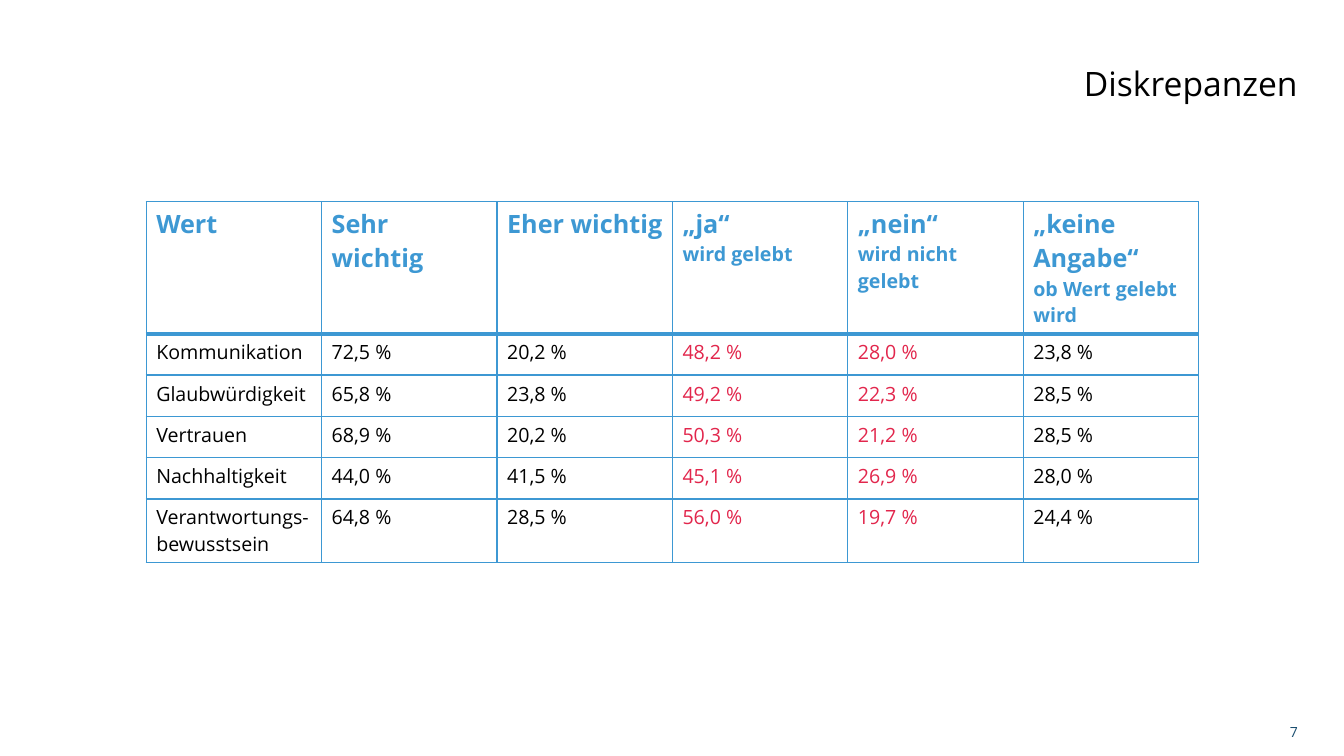
from dataclasses import dataclass

from lxml.etree import SubElement
from pptx import Presentation
from pptx.dml.color import RGBColor
from pptx.enum.text import MSO_ANCHOR, MSO_AUTO_SIZE, PP_ALIGN
from pptx.oxml import parse_xml
from pptx.oxml.ns import nsdecls, qn
from pptx.util import Inches, Pt


@dataclass(frozen=True)
class Theme:
    font: str = "Open Sans"
    ink: str = "000000"
    blue: str = "3D98D3"
    red: str = "E2264C"
    navy: str = "194D6F"
    white: str = "FFFFFF"
    title: int = 24
    head: int = 18
    body: int = 14
    small: int = 10
    thin: int = 1
    thick: int = 3


class Deck:
    """Holds the theme and the current slide and adds styled elements to it."""

    def __init__(self, theme):
        self.theme = theme
        self.file = Presentation()
        self.file.slide_width = Inches(13.33)
        self.file.slide_height = Inches(7.5)
        self.slide = self.file.slides.add_slide(self.file.slide_layouts[5])

    def style(self, run, size, color, bold=False):
        font = run.font
        font.name = self.theme.font
        font.size = Pt(size)
        font.bold = bold
        font.color.rgb = RGBColor.from_string(color)

    def line(self, shape, box, text, size, color):
        shape.left, shape.top, shape.width, shape.height = map(Inches, box)
        frame = shape.text_frame
        frame.text = text
        frame.word_wrap = True
        frame.auto_size = MSO_AUTO_SIZE.NONE
        frame.vertical_anchor = MSO_ANCHOR.MIDDLE
        para = frame.paragraphs[0]
        para.alignment = PP_ALIGN.RIGHT
        self.style(para.runs[0], size, color)

    def title(self, text, box):
        self.line(self.slide.shapes.title, box, text, self.theme.title, self.theme.ink)

    def number(self, text, box):
        shape = self.slide.shapes.add_textbox(*map(Inches, box))
        self.line(shape, box, text, self.theme.small, self.theme.navy)

    def border(self, cell, widths):
        props = cell._tc.get_or_add_tcPr()
        for spot, (side, width) in enumerate(widths.items()):
            edge = parse_xml(f'<a:ln{side} {nsdecls("a")} w="{Pt(width)}"/>')
            fill = SubElement(edge, qn("a:solidFill"))
            SubElement(fill, qn("a:srgbClr")).set("val", self.theme.blue)
            props.insert(spot, edge)

    def cell(self, cell, text, row, col):
        theme = self.theme
        cell.fill.solid()
        cell.fill.fore_color.rgb = RGBColor.from_string(theme.white)
        cell.text_frame.text = text
        runs = cell.text_frame.paragraphs[0].runs
        for index, run in enumerate(runs):
            if row == 0:
                note = index > 0 and col > 2
                self.style(run, theme.body if note else theme.head, theme.blue, True)
            else:
                self.style(run, theme.body, theme.red if col in (3, 4) else theme.ink)
        self.border(cell, {
            "L": theme.thin,
            "R": theme.thin,
            "T": theme.thick if row == 1 else theme.thin,
            "B": theme.thick if row == 0 else theme.thin,
        })

    def table(self, rows, left, top, width, height):
        box = map(Inches, (left, top, width * len(rows[0]), height * len(rows)))
        table = self.slide.shapes.add_table(len(rows), len(rows[0]), *box).table
        table.horz_banding = False
        for column in table.columns:
            column.width = Inches(width)
        for r, row in enumerate(rows):
            table.rows[r].height = Inches(height)
            for c, text in enumerate(row):
                self.cell(table.cell(r, c), text, r, c)


HEAD = ["Wert", "Sehr\vwichtig", "Eher wichtig", "„ja“ \vwird gelebt",
        "„nein“\vwird nicht gelebt", "„keine Angabe“\vob Wert gelebt wird"]
SHARES = {
    "Kommunikation": ("72,5", "20,2", "48,2", "28,0", "23,8"),
    "Glaubwürdigkeit": ("65,8", "23,8", "49,2", "22,3", "28,5"),
    "Vertrauen": ("68,9", "20,2", "50,3", "21,2", "28,5"),
    "Nachhaltigkeit": ("44,0", "41,5", "45,1", "26,9", "28,0"),
    "Verantwortungs- bewusstsein": ("64,8", "28,5", "56,0", "19,7", "24,4"),
}


def main():
    deck = Deck(Theme())
    deck.title("Diskrepanzen", (2.89, 0.58, 10.08, 0.48))
    rows = [[name, *(f"{share} %" for share in shares)] for name, shares in SHARES.items()]
    deck.table([HEAD, *rows], 1.45, 2, 1.74, 0.41)
    deck.number("7", (9.97, 7.02, 3, 0.48))
    deck.file.save("out.pptx")


if __name__ == "__main__":
    main()
